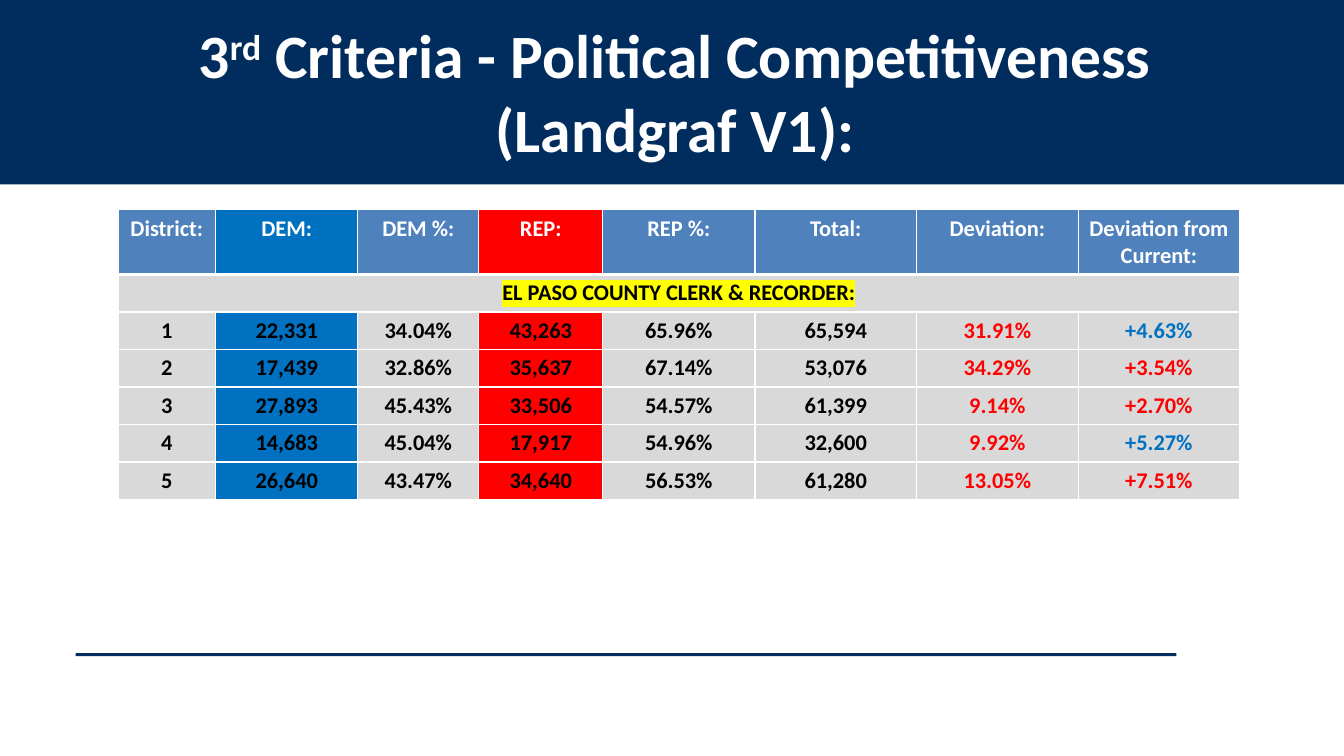
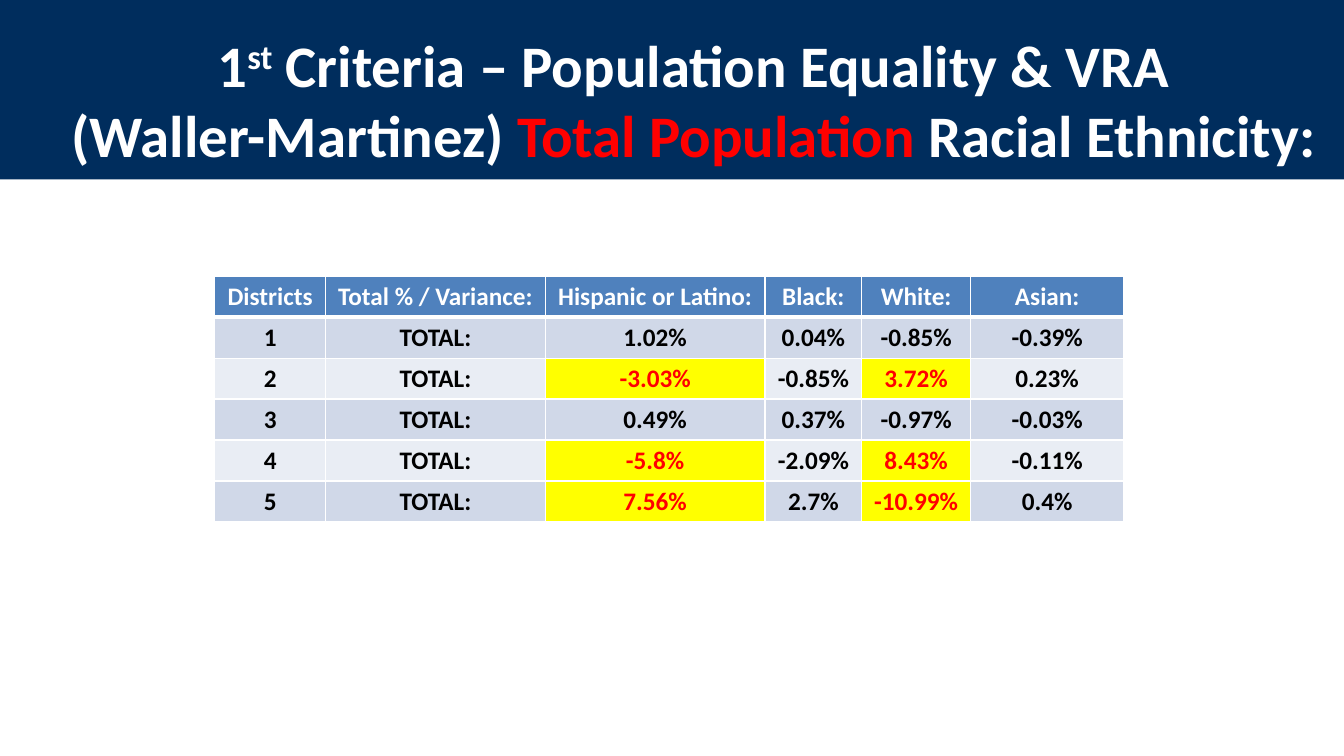
from lxml.etree import SubElement as add_element
from pptx import Presentation
from pptx.dml.color import RGBColor
from pptx.enum.shapes import MSO_SHAPE as Preset
from pptx.enum.text import MSO_ANCHOR as Anchor, MSO_AUTO_SIZE as AutoSize, PP_ALIGN as Align
from pptx.oxml.ns import qn
from pptx.util import Inches, Pt

COLUMNS, ROWS = 40, 22.5
NAVY, STEEL, BLUE, RED = "002D5D", "4F81BD", "0070C0", "FF0000"
WHITE, BLACK, YELLOW, GRAY = "FFFFFF", "000000", "FFFF00", "D9D9D9"
BANDS = ("E9EDF4", "D0D8E8")


def rgb(color):
    return RGBColor.from_string(color)


def write(para, text, size, color=WHITE, raised=False, highlight=None):
    span = para.add_run()
    span.text = text
    font = span.font
    font.size, font.bold = Pt(size), True
    font.color.rgb = rgb(color)
    properties = span._r.get_or_add_rPr()
    if raised:
        properties.set("baseline", "30000")
    if highlight:
        marker = add_element(properties, qn("a:highlight"))
        add_element(marker, qn("a:srgbClr"), val=highlight)
    font.name = "Calibri"


class Slides:
    def __init__(self):
        self.deck = Presentation()
        self.deck.slide_width, self.deck.slide_height = Inches(13.33), Inches(7.5)
        self.page = None

    def across(self, columns):
        return round(self.deck.slide_width * columns / COLUMNS)

    def down(self, rows):
        return round(self.deck.slide_height * rows / ROWS)

    def place(self, left, top, width, height):
        return self.across(left), self.down(top), self.across(width), self.down(height)

    def new_page(self):
        self.page = self.deck.slides.add_slide(self.deck.slide_layouts[5])

    def bar(self, *area):
        bar = self.page.shapes.add_shape(Preset.RECTANGLE, *self.place(*area))
        bar.shadow.inherit = False
        bar.fill.solid()
        bar.fill.fore_color.rgb = rgb(NAVY)
        bar.line.fill.background()
        return bar

    def title(self, area, band_height, size, lines):
        band = self.bar(0, 0, COLUMNS, band_height)
        box = self.page.shapes.title
        band._element.addnext(box._element)
        box.left, box.top, box.width, box.height = self.place(*area)
        frame = box.text_frame
        frame.word_wrap, frame.auto_size = True, AutoSize.NONE
        frame.vertical_anchor = Anchor.TOP
        for index, line in enumerate(lines):
            para = frame.add_paragraph() if index else frame.paragraphs[0]
            para.alignment = Align.CENTER
            para._p.get_or_add_pPr().set("marL", str(Inches(0.5)))
            for text, style in line:
                write(para, text, size, **style)

    def cell(self, cell, text, size, fill, top=1, bottom=1, **style):
        properties = cell._tc.get_or_add_tcPr()
        for side, weight in (("L", 1), ("R", 1), ("T", top), ("B", bottom)):
            border = add_element(properties, qn(f"a:ln{side}"), w=str(Pt(weight)))
            paint = add_element(border, qn("a:solidFill"))
            add_element(paint, qn("a:srgbClr"), val=WHITE)
        cell.fill.solid()
        cell.fill.fore_color.rgb = rgb(fill)
        para = cell.text_frame.paragraphs[0]
        para.alignment = Align.CENTER
        if text:
            write(para, text, size, **style)

    def table(self, left, top, widths, heights, size, rows, style_for):
        area = self.place(left, top, sum(widths), sum(heights))
        table = self.page.shapes.add_table(len(rows), len(widths), *area).table
        table.horz_banding = False
        for column, width in zip(table.columns, widths):
            column.width = self.across(width)
        for row, height in zip(table.rows, heights):
            row.height = self.down(height)
        for r, row in enumerate(rows):
            if len(row) == 1:
                table.cell(r, 0).merge(table.cell(r, len(widths) - 1))
            for c, text in enumerate(row):
                rule = {"top": 3 if r == 1 else 1, "bottom": 3 if r == 0 else 1}
                self.cell(table.cell(r, c), text, size, **rule, **style_for(r, c, row))


def party_style(r, c, row):
    if len(row) == 1:
        return {"fill": GRAY, "color": BLACK, "highlight": YELLOW}
    fill = {1: BLUE, 3: RED}.get(c, GRAY if r else STEEL)
    if r == 0:
        return {"fill": fill}
    if c == 7 and row[0] in ("1", "4"):
        return {"fill": fill, "color": BLUE}
    return {"fill": fill, "color": RED if c >= 6 else BLACK}


def variance_style(r, c, row):
    if r == 0:
        return {"fill": STEEL}
    if c >= 2 and abs(float(row[c].rstrip("%"))) > 3:
        return {"fill": YELLOW, "color": RED}
    return {"fill": BANDS[r % 2], "color": BLACK}


PARTY_ROWS = [
    ["District:", "DEM:", "DEM %:", "REP:", "REP %:", "Total:", "Deviation:", "Deviation from Current:"],
    ["EL PASO COUNTY CLERK & RECORDER:"],
    ["1", "22,331", "34.04%", "43,263", "65.96%", "65,594", "31.91%", "+4.63%"],
    ["2", "17,439", "32.86%", "35,637", "67.14%", "53,076", "34.29%", "+3.54%"],
    ["3", "27,893", "45.43%", "33,506", "54.57%", "61,399", "9.14%", "+2.70%"],
    ["4", "14,683", "45.04%", "17,917", "54.96%", "32,600", "9.92%", "+5.27%"],
    ["5", "26,640", "43.47%", "34,640", "56.53%", "61,280", "13.05%", "+7.51%"],
]
VARIANCE_ROWS = [
    ["Districts", "Total % / Variance:", "Hispanic or Latino:", "Black:", "White:", "Asian:"],
    ["1", "TOTAL:", "1.02%", "0.04%", "-0.85%", "-0.39%"],
    ["2", "TOTAL:", "-3.03%", "-0.85%", "3.72%", "0.23%"],
    ["3", "TOTAL:", "0.49%", "0.37%", "-0.97%", "-0.03%"],
    ["4", "TOTAL:", "-5.8%", "-2.09%", "8.43%", "-0.11%"],
    ["5", "TOTAL:", "7.56%", "2.7%", "-10.99%", "0.4%"],
]


def main():
    slides = Slides()

    slides.new_page()
    slides.title((1.68, 0.36, 35.34, 6.96), 5.49, 44, [
        [("3", {}), ("rd", {"raised": True}), (" Criteria - Political Competitiveness", {})],
        [("(Landgraf V1):", {})],
    ])
    slides.bar(2.25, 19.44, 32.76, 0.09)
    slides.table(3.51, 6.24, [2.91, 4.23, 3.6, 3.69, 4.53] + [4.81] * 3,
                 [1.91] + [1.1] * 6, 16, PARTY_ROWS, party_style)

    slides.new_page()
    slides.title((0.21, 0.69, 39.36, 6.78), 5.34, 42, [
        [("1", {}), ("st", {"raised": True}), (" Criteria – Population Equality & VRA", {})],
        [("(Waller-Martinez) ", {}), ("Total Population ", {"color": RED}), ("Racial Ethnicity:", {})],
    ])
    slides.table(6.39, 8.22, [3.3, 6.54, 6.54, 2.88, 3.24, 4.56],
                 [1.22] * 6, 18, VARIANCE_ROWS, variance_style)

    slides.deck.save("out.pptx")


if __name__ == "__main__":
    main()
